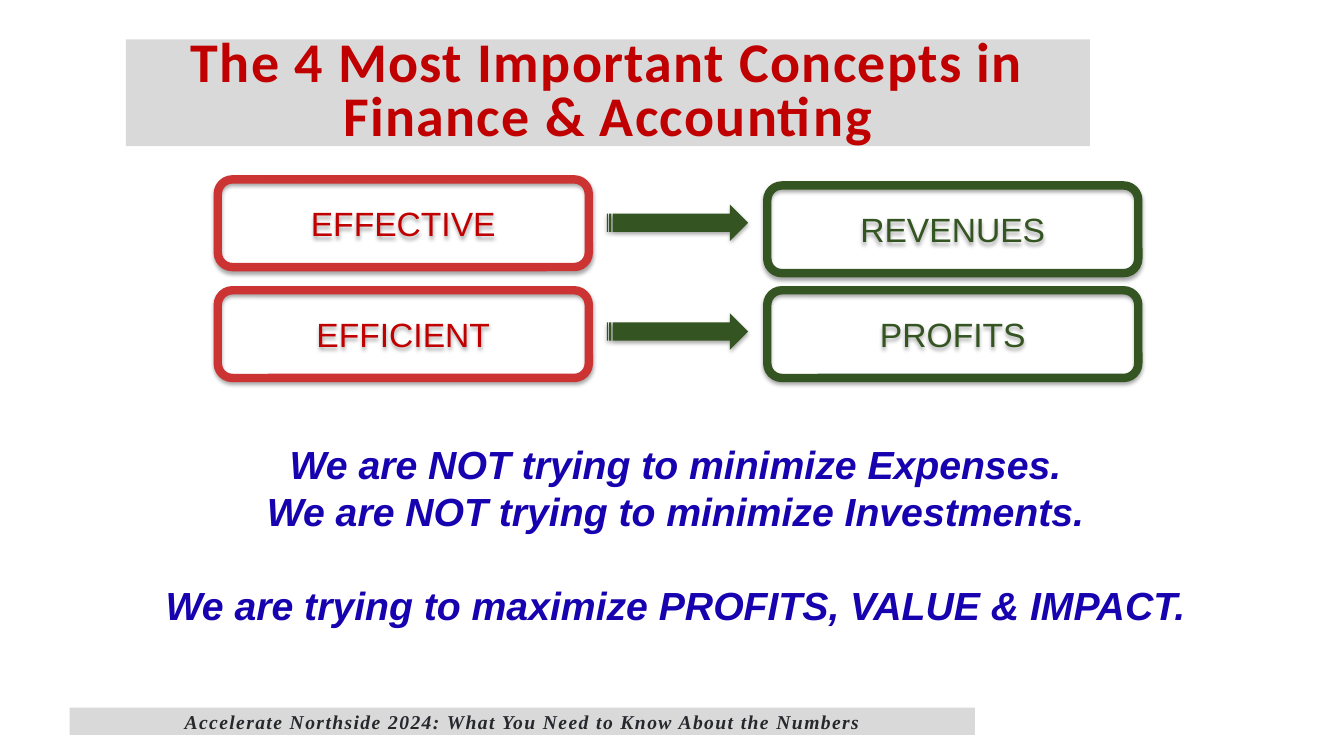
import pptx
import pptx.util
import pptx.dml.color
import pptx.enum.shapes
import pptx.enum.text
import lxml.etree
from dataclasses import dataclass

Pt = pptx.util.Pt
Kind = pptx.enum.shapes.MSO_SHAPE
Anchor = pptx.enum.text.MSO_ANCHOR


@dataclass
class Theme:
    gray: str = "D9D9D9"
    red: str = "C00000"
    frame: str = "CC3333"
    green: str = "345522"
    blue: str = "1702B0"
    ink: str = "26282D"
    title: int = 40
    body: int = 28
    label: int = 24
    foot: int = 14


theme = Theme()
deck = pptx.Presentation()
deck.slide_width = pptx.util.Inches(13.33)
deck.slide_height = pptx.util.Inches(7.5)
slide = deck.slides.add_slide(deck.slide_layouts[6])

# Grid of 133.3 columns by 75 rows
col = deck.slide_width / 133.3
row = deck.slide_height / 75


def add_box(kind, place, fill=None, line=None, shadow=False):
    x, y, w, h = place
    box = slide.shapes.add_shape(
        kind, round(x * col), round(y * row), round(w * col), round(h * row))
    box.shadow.inherit = False
    if fill:
        box.fill.solid()
        box.fill.fore_color.rgb = pptx.dml.color.RGBColor.from_string(fill)
    else:
        box.fill.background()
    if line:
        box.line.color.rgb = pptx.dml.color.RGBColor.from_string(line)
        box.line.width = Pt(6)
    else:
        box.line.fill.background()
    if shadow:
        ns = "{http://schemas.openxmlformats.org/drawingml/2006/main}"
        effects = box._element.spPr.find(ns + "effectLst")
        outer = lxml.etree.SubElement(
            effects, ns + "outerShdw", blurRad=str(Pt(3.1)), dist=str(Pt(1.8)),
            dir="5400000", rotWithShape="0")
        tint = lxml.etree.SubElement(outer, ns + "srgbClr", val="000000")
        lxml.etree.SubElement(tint, ns + "alpha", val="35000")
    return box


def add_text(box, lines, face, size, color, bold=False, slant=False,
             space=None, track=0, anchor=Anchor.MIDDLE):
    frame = box.text_frame
    frame.word_wrap = True
    frame.vertical_anchor = anchor
    frame.margin_left = frame.margin_right = 0
    frame.margin_top = frame.margin_bottom = 0
    frame.text = "\n".join(lines)
    for para in frame.paragraphs:
        para.alignment = pptx.enum.text.PP_ALIGN.CENTER
        para.line_spacing = space
        font = para.font
        font.name, font.size = face, Pt(size)
        font.bold, font.italic = bold, slant
        font.color.rgb = pptx.dml.color.RGBColor.from_string(color)
        if track:
            font._rPr.set("spc", str(track * 100))
    return frame


# Title
title = add_box(Kind.RECTANGLE, (12.5, 3.9, 95.6, 10.6), theme.gray)
add_text(title, ["The 4 Most Important Concepts in Finance & Accounting"],
         "Calibri", theme.title, theme.red, bold=True, space=0.8, track=1,
         anchor=Anchor.TOP)

# Concept boxes
concepts = [
    ("EFFECTIVE", 21.6, 17.8, theme.frame, theme.red),
    ("EFFICIENT", 21.6, 28.8, theme.frame, theme.red),
    ("REVENUES", 76.1, 18.4, theme.green, theme.green),
    ("PROFITS", 76.1, 28.8, theme.green, theme.green),
]
for name, x, y, edge, color in concepts:
    box = add_box(Kind.ROUNDED_RECTANGLE, (x, y, 36.8, 8.7), line=edge,
                  shadow=True)
    add_text(box, [name], "Arial", theme.label, color)

# Arrows
for y in (20.3, 31.1):
    add_box(Kind.STRIPED_RIGHT_ARROW, (60.2, y, 14, 3.6), theme.green,
            shadow=True)

# Message
pitch = Pt(theme.body * 1.2)
goals = slide.shapes.add_textbox(
    round(12.5 * col), round(43.7 * row), round(109 * col), round(21.7 * row))
frame = add_text(goals, [
    "We are NOT trying to minimize Expenses.",
    "We are NOT trying to minimize Investments.",
    "We are trying to maximize PROFITS, VALUE & IMPACT.",
], "Arial", theme.body, theme.blue, bold=True, slant=True, space=pitch,
    anchor=Anchor.TOP)
frame.paragraphs[-1].space_before = pitch

# Footer
foot = add_box(Kind.RECTANGLE, (6.9, 70.2, 89.8, 2.7), theme.gray)
frame = add_text(
    foot, ["Accelerate Northside 2024: What You Need to Know About the Numbers"],
    "Times New Roman", theme.foot, theme.ink, bold=True, slant=True,
    space=0.8, track=1)
frame.margin_top = round(0.5 * row)

deck.save("out.pptx")
